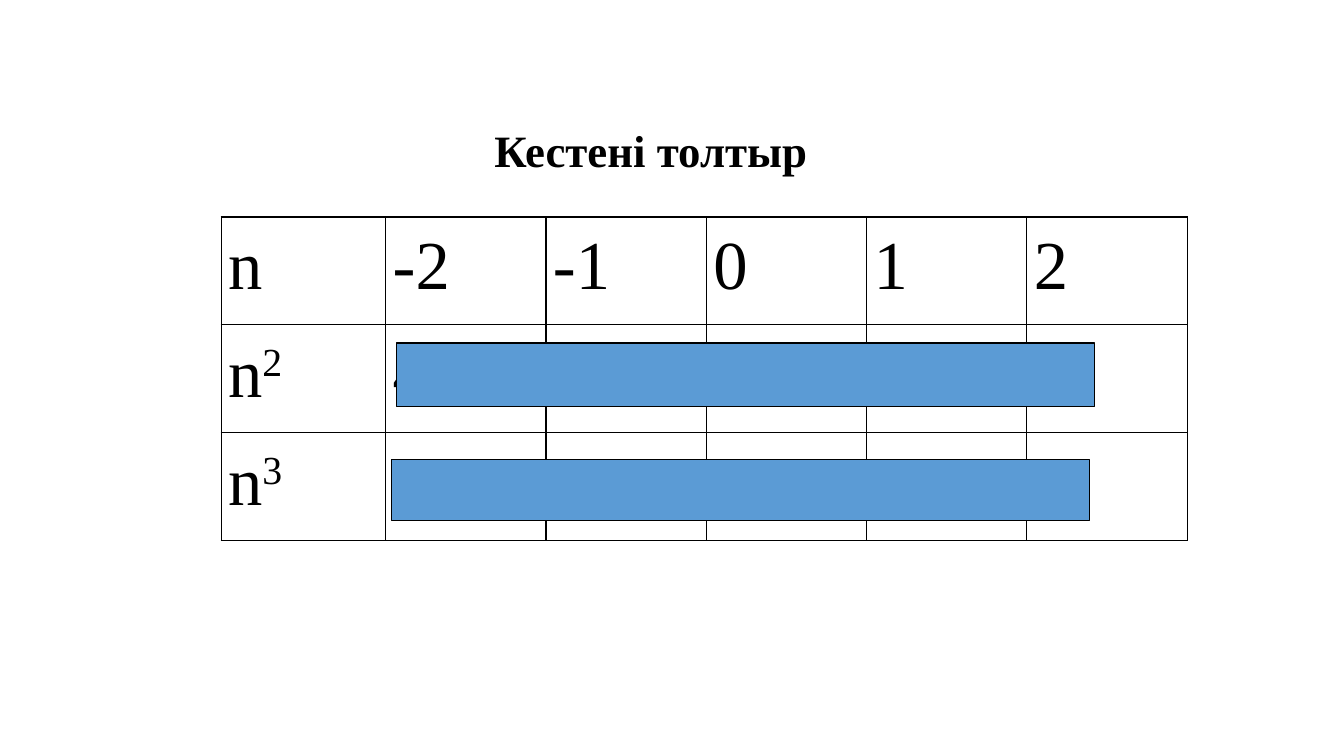
"""Build a slide with a table of squares and cubes under two cover bars."""
from lxml.etree import SubElement
from pptx import Presentation
from pptx.dml.color import RGBColor as RGB
from pptx.enum.shapes import MSO_SHAPE as SHAPE
from pptx.enum.text import MSO_AUTO_SIZE as AUTO, PP_ALIGN as ALIGN
from pptx.oxml.ns import qn
from pptx.util import Pt

COLORS = {"ink": "000000", "bar": "5B9BD5"}
FONT = "Times New Roman"


def style(run, size, bold=False):
    font = run.font
    font.name, font.size, font.bold = FONT, Pt(size), bold
    font.color.rgb = RGB.from_string(COLORS["ink"])


def border(cell):
    props = cell._tc.get_or_add_tcPr()
    for side in ("a:lnL", "a:lnR", "a:lnT", "a:lnB"):
        line = SubElement(props, qn(side), w=str(Pt(1)))
        fill = SubElement(line, qn("a:solidFill"))
        SubElement(fill, qn("a:srgbClr"), val=COLORS["ink"])


deck = Presentation()
deck.slide_width, deck.slide_height = Pt(960), Pt(540)
slide = deck.slides.add_slide(deck.slide_layouts[6])
shapes = slide.shapes

values = [-2, -1, 0, 1, 2]
rows = [("n", "", 1), ("n", "2", 2), ("n", "3", 3)]
frame = shapes.add_table(3, 6, Pt(158), Pt(155), Pt(690), Pt(231))
table = frame.table
table.first_row = table.horz_banding = False
for i, column in enumerate(table.columns):
    column.width = Pt(114.5 if i else 117.5)
for row in table.rows:
    row.height = Pt(77)

for r, (base, power, degree) in enumerate(rows):
    texts = [base] + [str(value ** degree) for value in values]
    for c, text in enumerate(texts):
        cell = table.cell(r, c)
        cell.margin_left = cell.margin_right = Pt(5)
        cell.margin_top = cell.margin_bottom = Pt(0)
        border(cell)
        cell.fill.background()
        para = cell.text_frame.paragraphs[0]
        para.text = text
        para.line_spacing, para.space_after = 1.15, Pt(10)
        if c == 0 and power:
            raised = para.add_run()
            raised.text = power
            raised._r.get_or_add_rPr().set("baseline", "30000")
        for run in para.runs:
            style(run, 49)

title = shapes.add_textbox(Pt(180), Pt(84), Pt(570), Pt(46)).text_frame
title.word_wrap = True
title.auto_size = AUTO.SHAPE_TO_FIT_TEXT
title.text = "Кестені толтыр"
title.paragraphs[0].alignment = ALIGN.CENTER
style(title.paragraphs[0].runs[0], 32, True)

for left, top, height in ((279.5, 328.5, 43), (283, 245, 45.5)):
    bar = shapes.add_shape(SHAPE.RECTANGLE, Pt(left), Pt(top), Pt(499), Pt(height))
    bar.shadow.inherit = False
    bar.fill.solid()
    bar.fill.fore_color.rgb = RGB.from_string(COLORS["bar"])
    bar.line.color.rgb = RGB.from_string(COLORS["ink"])
    bar.line.width = Pt(0.75)

deck.save("out.pptx")
